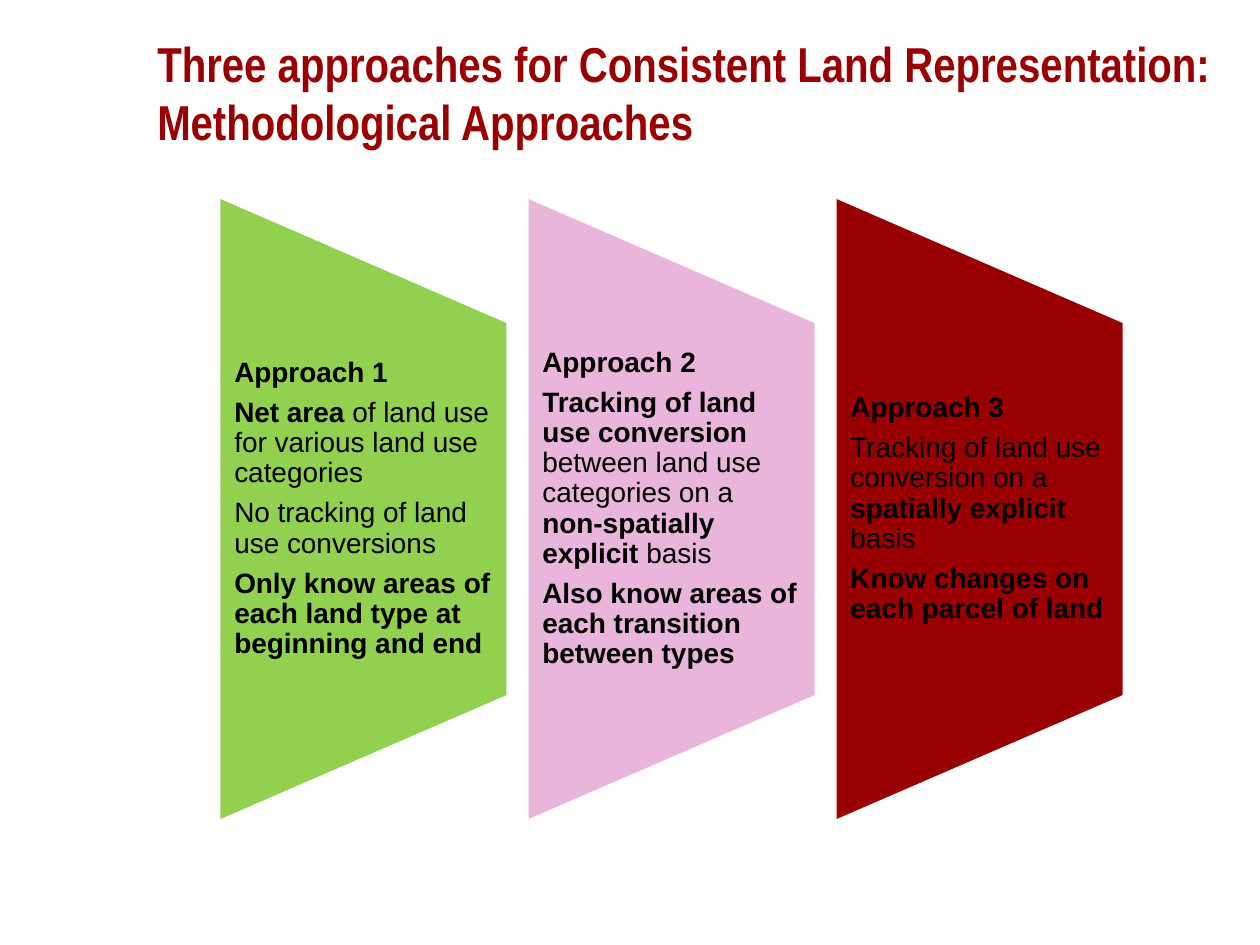
from pptx import Presentation
from pptx.dml.color import RGBColor
from pptx.enum.shapes import MSO_SHAPE
from pptx.enum.text import MSO_ANCHOR, PP_ALIGN
from pptx.util import Inches, Pt

RED = RGBColor(0x99, 0x00, 0x02)
GREEN = RGBColor(0x92, 0xD0, 0x50)
PINK = RGBColor(0xE9, 0xB5, 0xDB)
BLACK = RGBColor(0, 0, 0)

FIRST_LEFT, COLUMN_PITCH, COLUMN_WIDTH = 1.75, 2.445, 2.27
PANEL_HEIGHT, PANEL_MIDDLE = 4.92, 4.04
TEXT_HEIGHT = PANEL_HEIGHT * 0.6

# Each panel: fill and paragraphs; each paragraph: (text, bold) runs
PANELS = [
    (GREEN, [
        [("Approach 1", True)],
        [("Net area ", True), ("of land use for various land use categories", False)],
        [("No tracking of land use conversions", False)],
        [("Only know areas of each land type at beginning and end", True)],
    ]),
    (PINK, [
        [("Approach 2", True)],
        [("Tracking of land use conversion", True),
         (" between land use categories on a ", False),
         ("non-spatially explicit ", True), ("basis", False)],
        [("Also know areas of each transition between types", True)],
    ]),
    (RED, [
        [("Approach 3", True)],
        [("Tracking of land use conversion on a ", False),
         ("spatially explicit ", True), ("basis", False)],
        [("Know changes on each parcel of land", True)],
    ]),
]


def add_run(para, text, font_name, size, color, bold):
    span = para.add_run()
    span.text = text
    span.font.name = font_name
    span.font.size = Pt(size)
    span.font.color.rgb = color
    span.font.bold = bold


def add_text_frame(page, left, top, width, height):
    """Add a wrapping, vertically centred text box and return its frame."""
    box = page.shapes.add_textbox(Inches(left), Inches(top), Inches(width), Inches(height))
    frame = box.text_frame
    frame.word_wrap = True
    frame.vertical_anchor = MSO_ANCHOR.MIDDLE
    return frame


deck = Presentation()
deck.slide_width, deck.slide_height = Inches(10), Inches(7.5)
page = deck.slides.add_slide(deck.slide_layouts[6])

title = add_text_frame(page, 1.15, 0.18, 8.66, 1.1)
add_run(title.paragraphs[0],
        "Three approaches for Consistent Land Representation: Methodological Approaches",
        "Arial Narrow", 28, RED, True)

for column, (fill, paragraphs) in enumerate(PANELS):
    left = FIRST_LEFT + column * COLUMN_PITCH
    center = left + COLUMN_WIDTH / 2

    # A quarter turn swaps the panel's width and height about its centre
    panel = page.shapes.add_shape(
        MSO_SHAPE.FLOWCHART_MANUAL_OPERATION,
        Inches(center - PANEL_HEIGHT / 2), Inches(PANEL_MIDDLE - COLUMN_WIDTH / 2),
        Inches(PANEL_HEIGHT), Inches(COLUMN_WIDTH))
    panel.rotation = 270
    panel.shadow.inherit = False
    panel.fill.solid()
    panel.fill.fore_color.rgb = fill
    panel.line.fill.background()

    frame = add_text_frame(page, left, PANEL_MIDDLE - TEXT_HEIGHT / 2, COLUMN_WIDTH, TEXT_HEIGHT)
    frame.margin_left = frame.margin_right = Inches(0.11)
    frame.margin_top = frame.margin_bottom = 0
    for index, runs in enumerate(paragraphs):
        para = frame.add_paragraph() if index else frame.paragraphs[0]
        para.alignment = PP_ALIGN.LEFT
        para.line_spacing = 0.9
        para.space_after = Pt(5.6)
        for text, bold in runs:
            add_run(para, text, "Arial", 16, BLACK, bold)

deck.save("out.pptx")
